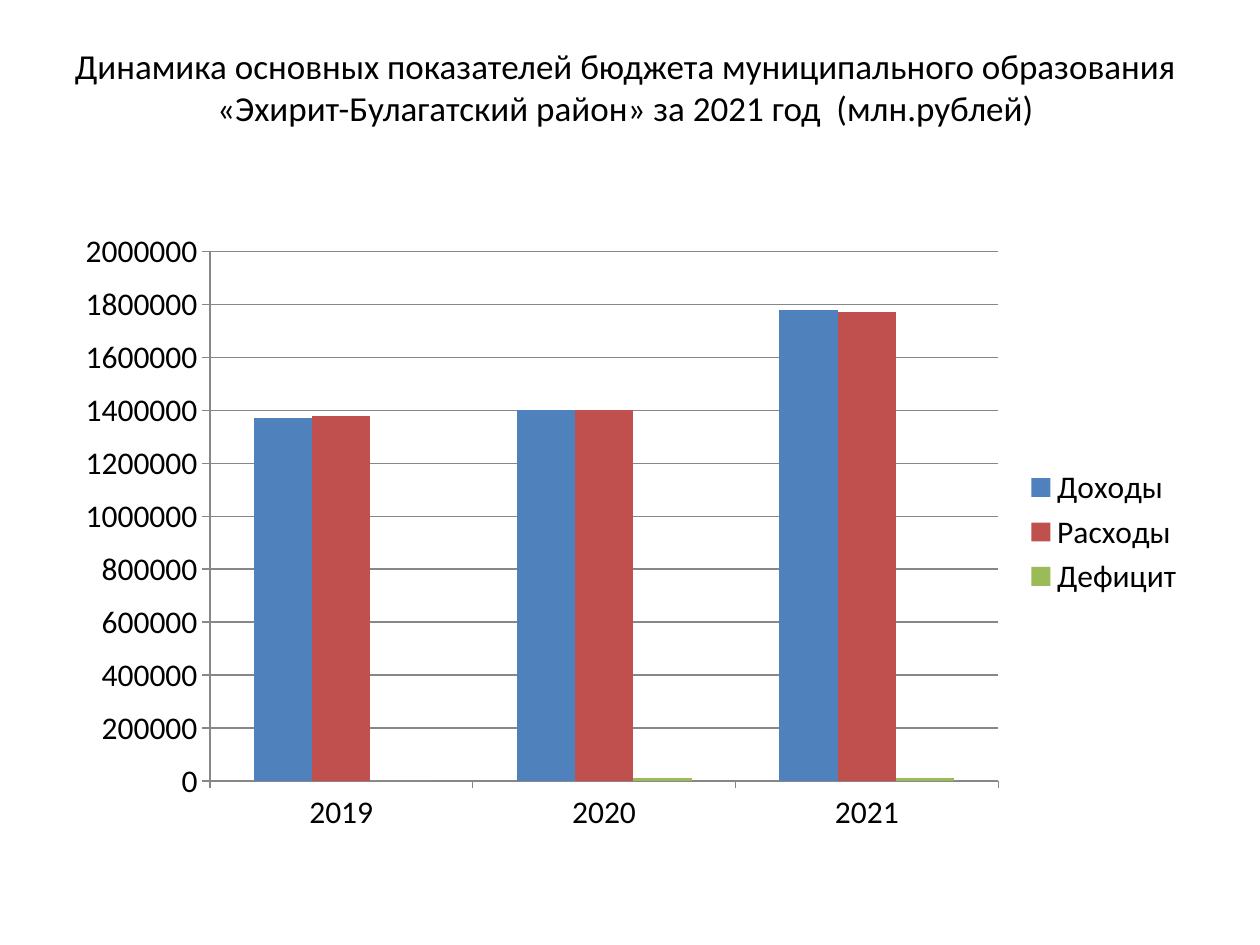
from dataclasses import dataclass

from pptx import Presentation
from pptx.chart.data import CategoryChartData
from pptx.dml.color import RGBColor
from pptx.enum.chart import XL_CHART_TYPE as ChartType
from pptx.enum.chart import XL_LEGEND_POSITION as LegendPos
from pptx.enum.chart import XL_TICK_MARK as Tick
from pptx.enum.text import MSO_ANCHOR as Anchor
from pptx.enum.text import PP_ALIGN as Align
from pptx.util import Emu, Pt

FONT = "Calibri"
BLACK = "000000"
AXIS_GREY = "878787"
PX_PER_INCH = 126


@dataclass(frozen=True)
class Box:
    left: int
    top: int
    width: int
    height: int

    def emu(self) -> tuple[Emu, ...]:
        return tuple(map(px, (self.left, self.top, self.width, self.height)))


@dataclass(frozen=True)
class Series:
    name: str
    values: tuple[int, ...]
    color: str


YEARS = ("2019", "2020", "2021")
BUDGET = (
    Series("Доходы", (1370000, 1400000, 1780000), "4F81BD"),
    Series("Расходы", (1380000, 1400000, 1770000), "C0504D"),
    Series("Дефицит", (0, 10000, 10000), "9BBB59"),
)


def px(n: int) -> Emu:
    return Emu(round(n * 914400 / PX_PER_INCH))


def rgb(color: str) -> RGBColor:
    return RGBColor.from_string(color)


def style_font(font, size: int, color: str) -> None:
    font.name = FONT
    font.size = Pt(size)
    font.bold = False
    font.color.rgb = rgb(color)


def add_text(s, box: Box, text: str, *, size: int, color: str = BLACK,
             align=Align.CENTER, anchor=Anchor.MIDDLE) -> None:
    tf = s.shapes.add_textbox(*box.emu()).text_frame
    tf.word_wrap = True
    tf.vertical_anchor = anchor
    p = tf.paragraphs[0]
    p.alignment = align
    r = p.add_run()
    r.text = text
    style_font(r.font, size, color)


def style_line(line) -> None:
    line.color.rgb = rgb(AXIS_GREY)
    line.width = Pt(0.75)


def add_budget_chart(s, box: Box) -> None:
    data = CategoryChartData(number_format="General")
    data.categories = YEARS
    for item in BUDGET:
        data.add_series(item.name, item.values)
    chart = s.shapes.add_chart(ChartType.COLUMN_CLUSTERED, *box.emu(), data).chart
    style_font(chart.font, 18, BLACK)
    chart.has_title = False
    chart.has_legend = True
    chart.legend.position = LegendPos.RIGHT
    chart.legend.include_in_layout = False

    plot = chart.plots[0]
    plot.gap_width = 150
    plot.overlap = 0
    plot.vary_by_categories = False
    for series, item in zip(plot.series, BUDGET):
        series.invert_if_negative = False
        series.format.fill.solid()
        series.format.fill.fore_color.rgb = rgb(item.color)

    for axis in (chart.category_axis, chart.value_axis):
        axis.major_tick_mark = Tick.OUTSIDE
        axis.minor_tick_mark = Tick.NONE
        style_line(axis.format.line)
    values = chart.value_axis
    values.minimum_scale = 0
    values.maximum_scale = 2000000
    values.major_unit = 200000
    values.has_major_gridlines = True
    style_line(values.major_gridlines.format.line)


def main() -> None:
    prs = Presentation()
    prs.slide_width, prs.slide_height = px(1260), px(945)
    s = prs.slides.add_slide(prs.slide_layouts[6])
    add_text(s, Box(54, 38, 1143, 97),
             "Динамика основных показателей бюджета муниципального образования "
             "«Эхирит-Булагатский район» за 2021 год  (млн.рублей)", size=20)
    add_budget_chart(s, Box(63, 220, 1134, 624))
    prs.save("out.pptx")


if __name__ == "__main__":
    main()
